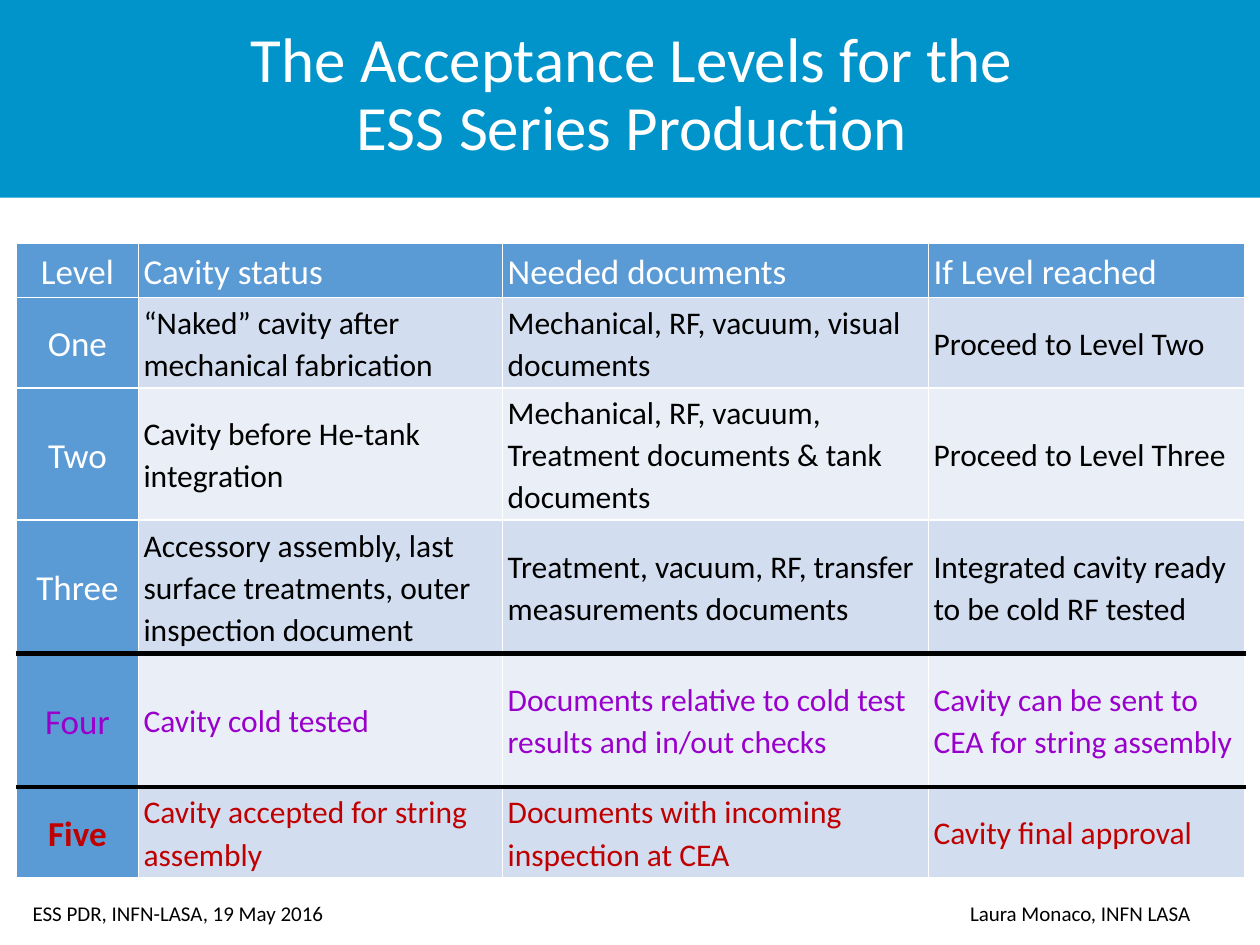
import pptx
import pptx.util
import pptx.dml.color
import pptx.enum.shapes
import pptx.enum.text
import pptx.oxml
import pptx.oxml.ns

COLORS = {
    "white": "FFFFFF", "black": "000000", "band": "0094CA", "header": "5B9BD5",
    "odd": "D2DEEF", "even": "EAEFF7", "purple": "9900CC", "red": "C00000",
}
FONT = "Calibri"
TITLE = "The Acceptance Levels for the ESS Series Production"
ROWS = [
    ("Level", "Cavity status", "Needed documents", "If Level reached"),
    ("One", "“Naked” cavity after mechanical fabrication",
     "Mechanical, RF, vacuum, visual documents", "Proceed to Level Two"),
    ("Two", "Cavity before He-tank integration",
     "Mechanical, RF, vacuum, Treatment documents & tank documents",
     "Proceed to Level Three"),
    ("Three", "Accessory assembly, last surface treatments, outer inspection document",
     "Treatment, vacuum, RF, transfer measurements documents",
     "Integrated cavity ready to be cold RF tested"),
    ("Four", "Cavity cold tested",
     "Documents relative to cold test results and in/out checks",
     "Cavity can be sent to CEA for string assembly"),
    ("Five", "Cavity accepted for string assembly",
     "Documents with incoming inspection at CEA", "Cavity final approval"),
]
COLUMN_WIDTHS = [0.97, 2.89, 3.38, 2.51]
ROW_HEIGHTS = [0.43, 0.72, 1.04, 1.06, 1.06, 0.72]
ROW_INKS = {4: "purple", 5: "red"}
HEAVY_RULES = {4, 5}
FOOTERS = [
    ("ESS PDR, INFN-LASA, 19 May 2016", 0.16, 3.38),
    ("Laura Monaco, INFN LASA", 7.6, 2.25),
]

inch = pptx.util.Inches
MIDDLE = pptx.enum.text.MSO_ANCHOR.MIDDLE
CENTER = pptx.enum.text.PP_ALIGN.CENTER
LEFT = pptx.enum.text.PP_ALIGN.LEFT


def paint(fill, color):
    fill.solid()
    fill.fore_color.rgb = pptx.dml.color.RGBColor.from_string(COLORS[color])


def write(para, text, size, color, bold=False):
    span = para.add_run()
    span.text = text
    span.font.name = FONT
    span.font.size = pptx.util.Pt(size)
    span.font.bold = bold
    span.font.color.rgb = pptx.dml.color.RGBColor.from_string(COLORS[color])


def add_borders(cell, row):
    rules = {"L": False, "R": False, "T": row in HEAVY_RULES, "B": row + 1 in HEAVY_RULES}
    properties = cell._tc.get_or_add_tcPr()
    for position, (side, heavy) in enumerate(rules.items()):
        width = pptx.util.Pt(3 if heavy else 1)
        color = COLORS["black" if heavy else "white"]
        properties.insert(position, pptx.oxml.parse_xml(
            f'<a:ln{side} {pptx.oxml.ns.nsdecls("a")} w="{width}"><a:solidFill>'
            f'<a:srgbClr val="{color}"/></a:solidFill></a:ln{side}>'))


def fill_cell(cell, row, column, text):
    labelled = row == 0 or column == 0
    paint(cell.fill, "header" if labelled else "odd" if row % 2 else "even")
    cell.vertical_anchor = MIDDLE
    cell.margin_left = cell.margin_right = inch(0.04)
    cell.margin_top = cell.margin_bottom = inch(0.02)
    para = cell.text_frame.paragraphs[0]
    para.alignment = CENTER if column == 0 else LEFT
    para.line_spacing = 1.1
    para.space_after = pptx.util.Pt(6)
    ink = ROW_INKS.get(row, "white" if labelled else "black")
    write(para, text, 20 if labelled else 18, ink, bold=text == "Five")
    add_borders(cell, row)


def add_title(page):
    band = page.shapes.add_shape(
        pptx.enum.shapes.MSO_SHAPE.RECTANGLE, 0, 0, inch(10), inch(1.57))
    band.shadow.inherit = False
    paint(band.fill, "band")
    band.line.fill.background()
    title = page.shapes.title
    band._element.getparent().insert(2, band._element)
    title.left, title.top = inch(1.84), inch(0.06)
    title.width, title.height = inch(6.35), inch(1.41)
    title.text_frame.word_wrap = True
    title.text_frame.vertical_anchor = MIDDLE
    para = title.text_frame.paragraphs[0]
    para.alignment = CENTER
    para.line_spacing = 0.9
    write(para, TITLE, 36, "white")


def add_levels(page):
    frame = page.shapes.add_table(
        len(ROWS), len(COLUMN_WIDTHS), inch(0.13), inch(1.93),
        inch(sum(COLUMN_WIDTHS)), inch(sum(ROW_HEIGHTS)))
    table = frame.table
    for column, width in zip(table.columns, COLUMN_WIDTHS):
        column.width = inch(width)
    for row, height in zip(table.rows, ROW_HEIGHTS):
        row.height = inch(height)
    for row, texts in enumerate(ROWS):
        for column, text in enumerate(texts):
            fill_cell(table.cell(row, column), row, column, text)


def add_footers(page):
    for text, left, width in FOOTERS:
        box = page.shapes.add_textbox(inch(left), inch(7.1), inch(width), inch(0.4))
        box.text_frame.word_wrap = True
        write(box.text_frame.paragraphs[0], text, 12, "black")


def main():
    deck = pptx.Presentation()
    deck.slide_width, deck.slide_height = inch(10), inch(7.5)
    page = deck.slides.add_slide(deck.slide_layouts[5])
    paint(page.background.fill, "white")
    add_title(page)
    add_levels(page)
    add_footers(page)
    deck.save("out.pptx")


if __name__ == "__main__":
    main()
